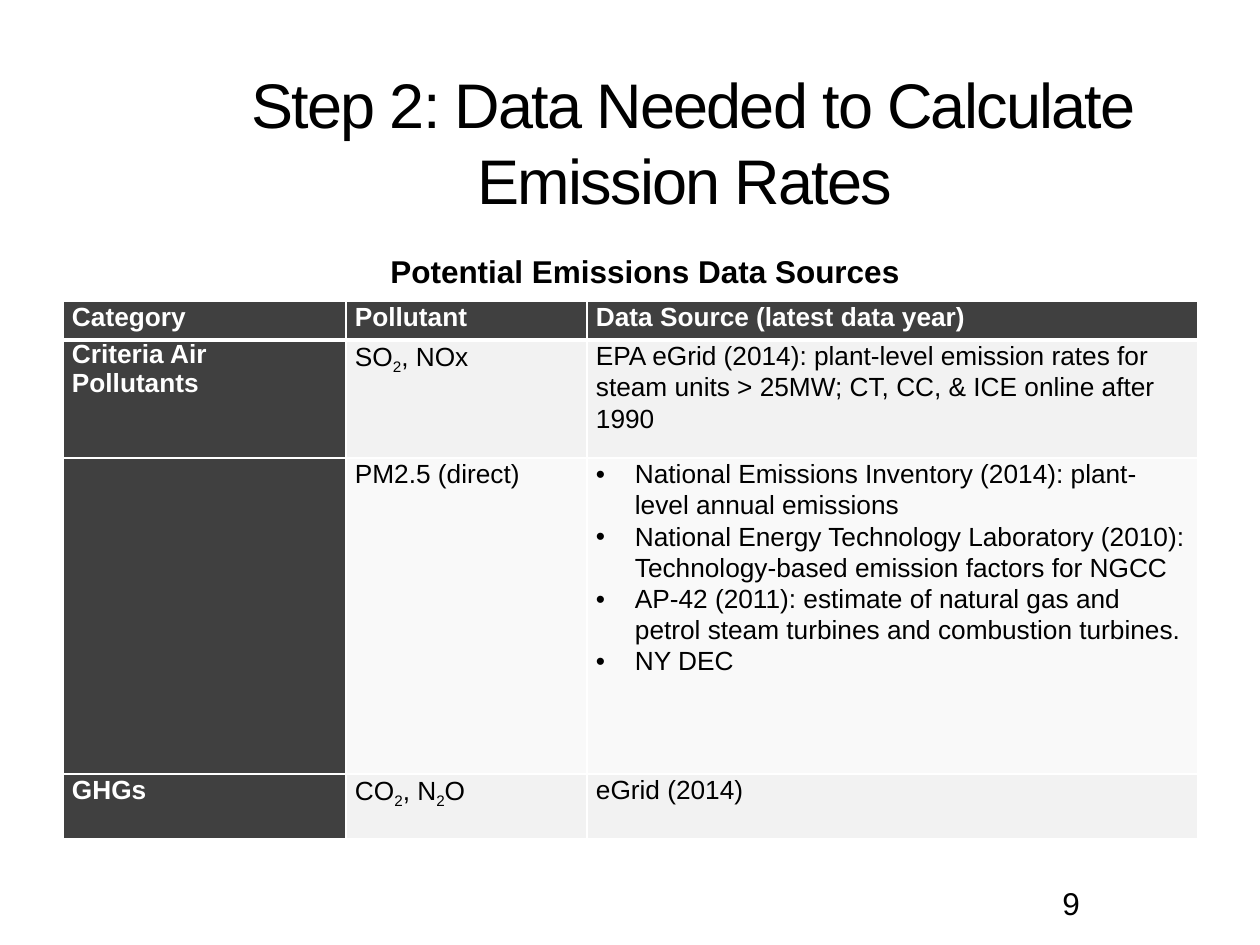
from lxml.etree import SubElement
from pptx import Presentation
from pptx.dml.color import RGBColor
from pptx.enum.text import MSO_ANCHOR, PP_ALIGN
from pptx.oxml.ns import qn
from pptx.util import Emu, Pt

COLORS = {"ink": "000000", "paper": "FFFFFF", "dark": "404040", "band": "F2F2F2", "pale": "F9F9F9"}
FONT = "Arial"
EMU_PER_PX = 914400 / 126
COLUMN_WIDTHS = [283, 241, 611]
ROW_HEIGHTS = [39, 118, 316, 65]
BULLET_INDENT = 39
ROWS = [
    [["Category"], ["Pollutant"], ["Data Source (latest data year)"]],
    [
        ["Criteria Air Pollutants"],
        ["SO_2_, NOx"],
        ["EPA eGrid (2014): plant-level emission rates for steam units > 25MW; "
         "CT, CC, & ICE online after 1990"],
    ],
    [
        [],
        ["PM2.5 (direct)"],
        [
            "National Emissions Inventory (2014): plant-level annual emissions",
            "National Energy Technology Laboratory (2010): Technology-based emission factors for NGCC",
            "AP-42 (2011): estimate of natural gas and petrol steam turbines and combustion turbines.",
            "NY DEC",
        ],
    ],
    [["GHGs"], ["CO_2_, N_2_O"], ["eGrid (2014)"]],
]


def px(length):
    return Emu(round(length * EMU_PER_PX))


def color(name):
    return RGBColor.from_string(COLORS[name])


def style(para, size, ink="ink", bold=False):
    para.font.name = FONT
    para.font.size = Pt(size)
    para.font.bold = bold
    para.font.color.rgb = color(ink)


def add_title(page, left, top, width, height):
    title = page.shapes.title
    title.left, title.top, title.width, title.height = map(px, (left, top, width, height))
    frame = title.text_frame
    frame.vertical_anchor = MSO_ANCHOR.MIDDLE
    para = frame.paragraphs[0]
    para.alignment = PP_ALIGN.CENTER
    style(para, 36)
    span = para.add_run()
    span.text = "Step 2: Data Needed to Calculate Emission Rates "
    span.font._element.set("spc", "-100")


def add_label(page, text, left, top, width, height, bold=False, wrap=True):
    box = page.shapes.add_textbox(*map(px, (left, top, width, height)))
    box.text_frame.word_wrap = wrap
    para = box.text_frame.paragraphs[0]
    para.text = text
    style(para, 18, bold=bold)


def add_bullet(para):
    properties = para._p.get_or_add_pPr()
    properties.set("marL", str(px(BULLET_INDENT)))
    properties.set("indent", str(-px(BULLET_INDENT)))
    SubElement(properties, qn("a:buFont"), typeface=FONT)
    SubElement(properties, qn("a:buChar"), char="•")


def add_spans(para, text):
    for index, part in enumerate(text.split("_")):
        span = para.add_run()
        span.text = part
        if index % 2:
            span.font._element.set("baseline", "-25000")


def set_borders(cell, row):
    properties = cell._tc.get_or_add_tcPr()
    widths = {"lnL": 1, "lnR": 1, "lnT": 3 if row == 1 else 1, "lnB": 3 if row == 0 else 1}
    for side, width in widths.items():
        line = SubElement(properties, qn(f"a:{side}"), w=str(Pt(width)))
        SubElement(SubElement(line, qn("a:solidFill")), qn("a:srgbClr"), val=COLORS["paper"])


def fill_cell(cell, row, column, lines):
    heading = row == 0 or column == 0
    cell.margin_left = cell.margin_right = px(9)
    cell.margin_top = cell.margin_bottom = 0
    set_borders(cell, row)
    cell.fill.solid()
    cell.fill.fore_color.rgb = color("dark" if heading else "band" if row % 2 else "pale")
    frame = cell.text_frame
    for index, text in enumerate(lines):
        para = frame.add_paragraph() if index else frame.paragraphs[0]
        if (row, column) != (1, 0):
            para.line_spacing = 1.07
        if len(lines) > 1:
            add_bullet(para)
        style(para, 15, "paper" if heading else "ink", heading)
        add_spans(para, text)


def add_source_table(page, left, top):
    size = sum(COLUMN_WIDTHS), sum(ROW_HEIGHTS)
    table = page.shapes.add_table(
        len(ROWS), len(COLUMN_WIDTHS), *map(px, (left, top, *size))
    ).table
    for column, width in zip(table.columns, COLUMN_WIDTHS):
        column.width = px(width)
    for row, height in enumerate(ROW_HEIGHTS):
        table.rows[row].height = px(height)
        for column, lines in enumerate(ROWS[row]):
            fill_cell(table.cell(row, column), row, column, lines)


def main():
    deck = Presentation()
    deck.slide_width, deck.slide_height = px(1260), px(945)
    page = deck.slides.add_slide(deck.slide_layouts[5])
    add_title(page, 189, 73, 1008, 136)
    add_source_table(page, 63, 301)
    add_label(page, "Potential Emissions Data Sources", 378, 246, 539, 50, bold=True, wrap=False)
    add_label(page, "9", 1050, 878, 147, 45)
    deck.save("out.pptx")


if __name__ == "__main__":
    main()
